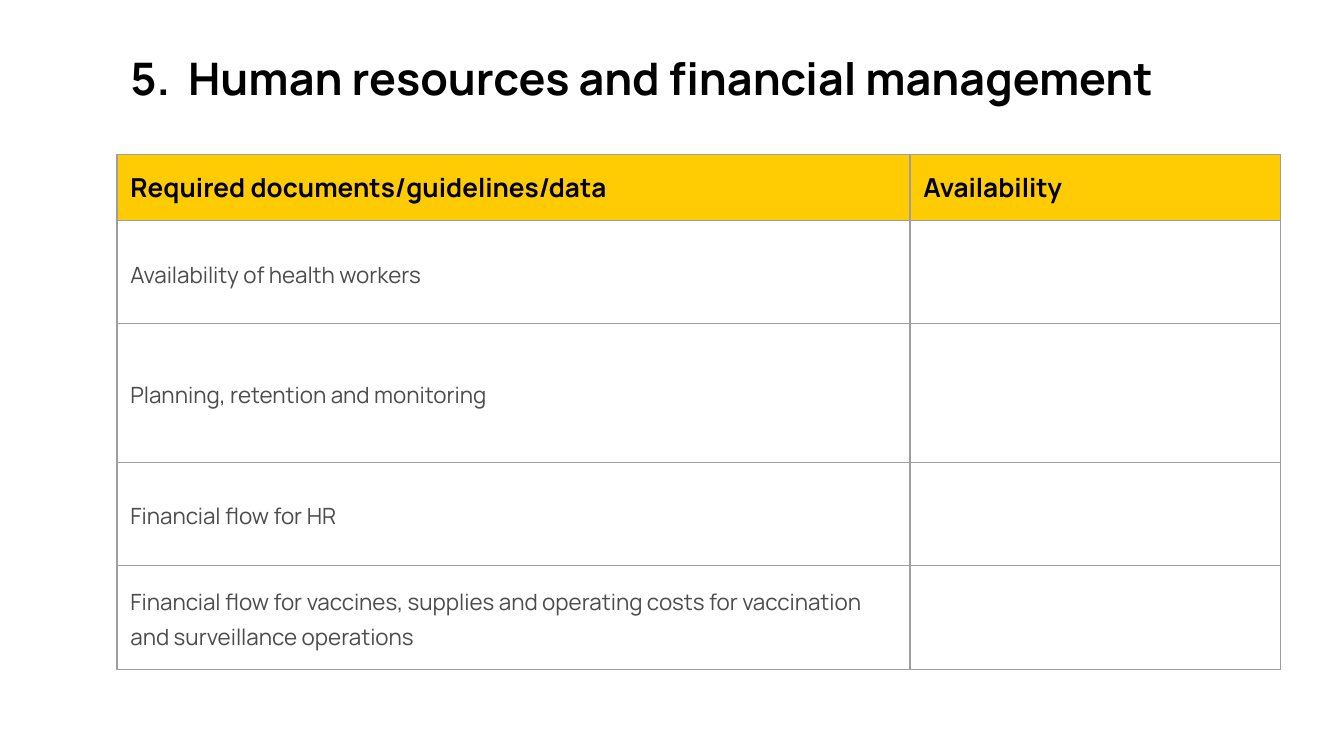
from lxml import etree
from pptx import Presentation
from pptx.dml.color import RGBColor
from pptx.enum.text import MSO_ANCHOR as Anchor, MSO_AUTO_SIZE as AutoSize, PP_ALIGN as Align
from pptx.oxml.ns import qn
from pptx.util import Inches, Pt

COLORS = {"black": "000000", "body": "4C4C4C", "header": "FFCB03", "border": "9E9E9E"}
FONT = "Manrope"
INSET = Inches(0.1)

ROWS = [
    ("Required documents/guidelines/data", "Availability"),
    ("Availability of health workers", ""),
    ("Planning, retention and monitoring", ""),
    ("Financial flow for HR", ""),
    ("Financial flow for vaccines, supplies and operating costs "
     "for vaccination and surveillance operations", ""),
]
COLUMN_WIDTHS = [5.9, 2.76]
ROW_HEIGHTS = [0.49, 0.77, 1.03, 0.77, 0.77]


def style_paragraph(para, size, color, bold):
    para.alignment = Align.LEFT
    para.font.name = FONT
    para.font.size = Pt(size)
    para.font.bold = bold
    para.font.color.rgb = RGBColor.from_string(COLORS[color])


def add_borders(cell):
    properties = cell._tc.get_or_add_tcPr()
    for side in ("a:lnL", "a:lnR", "a:lnT", "a:lnB"):
        line = etree.SubElement(properties, qn(side), w=str(Pt(0.75)))
        fill = etree.SubElement(line, qn("a:solidFill"))
        etree.SubElement(fill, qn("a:srgbClr"), val=COLORS["border"])


deck = Presentation()
deck.slide_width = Inches(10)
deck.slide_height = Inches(10 * 9 / 16)
page = deck.slides.add_slide(deck.slide_layouts[5])

title = page.shapes.title
title.left, title.top = Inches(0.87), Inches(0.28)
title.width, title.height = Inches(9.13), Inches(0.59)
frame = title.text_frame
frame.text = "5.  Human resources and financial management"
frame.word_wrap = True
frame.auto_size = AutoSize.NONE
frame.vertical_anchor = Anchor.TOP
frame.margin_left = frame.margin_right = INSET
frame.margin_top = frame.margin_bottom = INSET
style_paragraph(frame.paragraphs[0], 24, "black", True)

table = page.shapes.add_table(
    len(ROWS), len(COLUMN_WIDTHS), Inches(0.87), Inches(1.15),
    Inches(sum(COLUMN_WIDTHS)), Inches(sum(ROW_HEIGHTS))).table
table.horz_banding = False
for column, width in zip(table.columns, COLUMN_WIDTHS):
    column.width = Inches(width)

for row_index, (row, height, texts) in enumerate(zip(table.rows, ROW_HEIGHTS, ROWS)):
    row.height = Inches(height)
    is_header = row_index == 0
    for cell, text in zip(row.cells, texts):
        cell.text = text
        cell.vertical_anchor = Anchor.MIDDLE
        cell.margin_left = cell.margin_right = INSET
        cell.margin_top = cell.margin_bottom = INSET
        add_borders(cell)
        para = cell.text_frame.paragraphs[0]
        if is_header:
            cell.fill.solid()
            cell.fill.fore_color.rgb = RGBColor.from_string(COLORS["header"])
            style_paragraph(para, 14, "black", True)
        else:
            cell.fill.background()
            para.line_spacing = 1.15
            style_paragraph(para, 12, "body", False)

deck.save("out.pptx")
